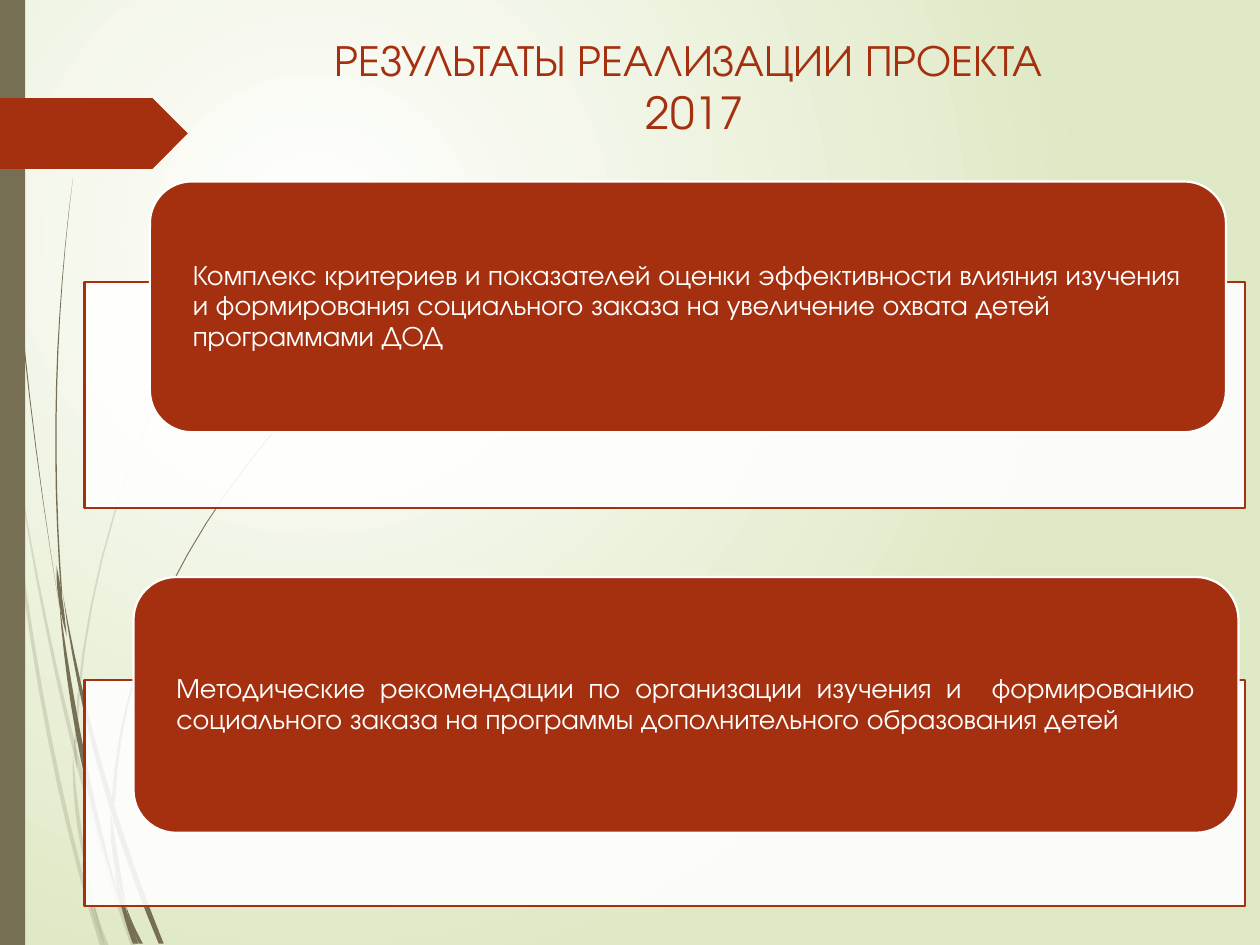
from dataclasses import dataclass

from lxml import etree
from pptx import Presentation
from pptx.dml.color import RGBColor
from pptx.enum import shapes, text
from pptx.oxml import ns
from pptx.util import Inches, Pt


@dataclass(frozen=True)
class Theme:
    accent: RGBColor = RGBColor(0xA5, 0x30, 0x10)
    stem: RGBColor = RGBColor(0x76, 0x6F, 0x54)
    white: RGBColor = RGBColor(0xFF, 0xFF, 0xFF)
    meadow: RGBColor = RGBColor(0xDF, 0xE8, 0xC4)
    font: str = "TeX Gyre Adventor"
    title_size: float = 25.2
    body_size: float = 16
    border: float = 1.25


@dataclass(frozen=True)
class Blade:
    """A curved blade of grass, in inches: three points on it and its width at each."""
    tip: tuple
    middle: tuple
    root: tuple
    widths: tuple


THEME = Theme()
BLADE_STEPS = 12
UNITS_PER_INCH = 1000

PALE_TUFT = {
    "outer leaf": Blade((0, 2.9), (0.32, 5.46), (0.81, 7.51), (0.01, 0.03, 0.03)),
    "inner leaf": Blade((0.1, 3.45), (0.52, 5.65), (1.06, 7.51), (0, 0.03, 0.04)),
    "shoot": Blade((2.17, 1.53), (1.03, 3.71), (0.6, 5.9), (0, 0.01, 0.02)),
    "shoot joint": Blade((0.59, 5.86), (0.6, 5.98), (0.61, 6.1), (0, 0.02, 0)),
    "shoot base": Blade((0.58, 5.99), (0.62, 6.5), (0.73, 7.11), (0, 0.03, 0)),
    "long root": Blade((0.65, 6.83), (0.72, 7.13), (0.83, 7.51), (0, 0.03, 0.01)),
    "short root": Blade((0.73, 7.11), (0.78, 7.31), (0.85, 7.51), (0, 0.02, 0.03)),
}
DARK_TUFT = {
    "outer leaf": Blade((0.03, 0), (0.15, 2.33), (0.47, 4.81), (0.01, 0.01, 0)),
    "outer leaf base": Blade((0.47, 4.77), (0.66, 6.02), (0.97, 7.22), (0, 0.04, 0)),
    "outer leaf root": Blade((0.97, 7.22), (1.02, 7.36), (1.07, 7.49), (0, 0.02, 0.03)),
    "inner leaf": Blade((0.5, 4.72), (0.8, 6.1), (1.28, 7.49), (0, 0.04, 0.04)),
    "upright leaf": Blade((0.58, 1.41), (0.45, 3.06), (0.49, 4.72), (0, 0.01, 0.01)),
    "upright joint": Blade((0.45, 4.49), (0.48, 4.75), (0.53, 5.05), (0, 0.03, 0)),
    "shoot": Blade((2.16, 3.44), (1.25, 4.88), (0.9, 6.36), (0.01, 0.01, 0.03)),
    "shoot joint": Blade((0.88, 6.31), (0.9, 6.44), (0.91, 6.56), (0, 0.02, 0)),
    "shoot base": Blade((0.88, 6.45), (0.92, 6.82), (1, 7.19), (0, 0.04, 0)),
    "long root": Blade((0.91, 6.91), (0.98, 7.2), (1.09, 7.49), (0, 0.03, 0.02)),
    "short root": Blade((1, 7.19), (1.05, 7.34), (1.12, 7.49), (0, 0.02, 0.03)),
}

TITLE = "РЕЗУЛЬТАТЫ РЕАЛИЗАЦИИ ПРОЕКТА \v2017"
# card box, alignment, wording
RESULTS = [
    ((1.19, 1.44, 8.54, 1.99), text.PP_ALIGN.LEFT,
     "Комплекс критериев и показателей оценки эффективности влияния изучения и "
     "формирования социального заказа на увеличение охвата детей программами ДОД"),
    ((1.06, 4.58, 8.77, 2.03), text.PP_ALIGN.JUSTIFY,
     "Методические рекомендации по организации изучения и  формированию "
     "социального заказа на программы дополнительного образования детей"),
]
FRAME_LEFT, FRAME_TOP, FRAME_WIDTH, FRAME_HEIGHT = 0.67, 2.24, 9.21, 1.79
FRAME_PITCH = 3.16
CARD_PADDING = 0.1


def apply(target, values):
    for name, value in values.items():
        setattr(target, name, value)


def paint(shape, fill, border=None, opacity=100):
    shape.shadow.inherit = False
    shape.fill.solid()
    shape.fill.fore_color.rgb = fill
    if opacity < 100:
        color = shape.element.spPr.find(ns.qn("a:solidFill"))[0]
        etree.SubElement(color, ns.qn("a:alpha")).set("val", str(opacity * 1000))
    if border is None:
        shape.line.fill.background()
    else:
        shape.line.color.rgb = border
        shape.line.width = Pt(THEME.border)


def through(start, middle, end, t):
    """Value at t of the parabola that meets start, middle, end at t = 0, 0.5, 1."""
    return (start * (1 - t) * (1 - 2 * t) + middle * 4 * t * (1 - t)
            + end * t * (2 * t - 1))


def blade_outline(blade):
    """Go down the left edge of the blade and back up its right edge."""
    left, right = [], []
    for step in range(BLADE_STEPS + 1):
        t = step / BLADE_STEPS
        x, y = (through(*axis, t) for axis in zip(blade.tip, blade.middle, blade.root))
        half = through(*blade.widths, t) / 2
        left.append((x - half, y))
        right.append((x + half, y))
    return [(x * UNITS_PER_INCH, y * UNITS_PER_INCH) for x, y in left + right[::-1]]


def add_blade(slide, blade, opacity):
    first, *others = blade_outline(blade)
    builder = slide.shapes.build_freeform(*first, scale=Inches(1) / UNITS_PER_INCH)
    builder.add_line_segments(others, close=True)
    paint(builder.convert_to_shape(), THEME.stem, opacity=opacity)


def add_block(slide, kind, box, fill, border=None, opacity=100):
    shape = slide.shapes.add_shape(kind, *map(Inches, box))
    paint(shape, fill, border, opacity)


def write(frame, wording, size, color, frame_format, paragraph_format):
    apply(frame, frame_format)
    frame.text = wording
    paragraph = frame.paragraphs[0]
    apply(paragraph, paragraph_format)
    for run in paragraph.runs:
        apply(run.font, {"name": THEME.font, "size": Pt(size)})
        run.font.color.rgb = color


def set_background(slide):
    """Radial gradient from white to meadow green."""
    fill = slide.background.fill
    fill.gradient()
    for stop, color, position in zip(fill.gradient_stops, (THEME.white, THEME.meadow), (0, 1)):
        stop.color.rgb = color
        stop.position = position
    gradient = slide.element.xpath("./p:cSld/p:bg//a:gradFill")[0]
    gradient.remove(gradient.find(ns.qn("a:lin")))
    radial = etree.SubElement(gradient, ns.qn("a:path"))
    radial.set("path", "circle")
    center = etree.SubElement(radial, ns.qn("a:fillToRect"))
    for side, percent in zip("ltrb", (50, 50, 100, 100)):
        center.set(side, str(percent * 1000))


def add_decoration(slide):
    for tuft, opacity in ((PALE_TUFT, 20), (DARK_TUFT, 100)):
        for blade in tuft.values():
            add_blade(slide, blade, opacity)
    add_block(slide, shapes.MSO_SHAPE.RECTANGLE, (0, 0, 0.2, 7.5), THEME.stem)
    add_block(slide, shapes.MSO_SHAPE.PENTAGON, (0, 0.78, 1.49, 0.56), THEME.accent)


def add_title(slide):
    title = slide.shapes.title
    slide.shapes.element.append(title.element)  # in front of the decoration
    apply(title, {"left": Inches(1.46), "top": Inches(0.21),
                  "width": Inches(8.11), "height": Inches(0.94)})
    write(title.text_frame, TITLE, THEME.title_size, THEME.accent,
          {"vertical_anchor": text.MSO_ANCHOR.MIDDLE, "auto_size": text.MSO_AUTO_SIZE.NONE},
          {"alignment": text.PP_ALIGN.CENTER})


def add_result(slide, row, card_box, alignment, wording):
    """A white frame, the card that overlaps it and the wording inside the card."""
    frame_box = (FRAME_LEFT, FRAME_TOP + row * FRAME_PITCH, FRAME_WIDTH, FRAME_HEIGHT)
    add_block(slide, shapes.MSO_SHAPE.RECTANGLE, frame_box, THEME.white, THEME.accent, opacity=90)
    add_block(slide, shapes.MSO_SHAPE.ROUNDED_RECTANGLE, card_box, THEME.accent, THEME.white)
    left, top, width, height = card_box
    label = slide.shapes.add_textbox(
        Inches(left + CARD_PADDING), Inches(top + CARD_PADDING),
        Inches(width - 2 * CARD_PADDING), Inches(height - 2 * CARD_PADDING))
    write(label.text_frame, wording, THEME.body_size, THEME.white,
          {"word_wrap": True, "vertical_anchor": text.MSO_ANCHOR.MIDDLE,
           "margin_left": Inches(0.24), "margin_right": Inches(0.24),
           "margin_top": 0, "margin_bottom": 0},
          {"alignment": alignment, "line_spacing": 0.9})


def main():
    deck = Presentation()
    apply(deck, {"slide_width": Inches(10), "slide_height": Inches(7.5)})
    slide = deck.slides.add_slide(deck.slide_layouts[5])
    set_background(slide)
    add_decoration(slide)
    add_title(slide)
    for row, result in enumerate(RESULTS):
        add_result(slide, row, *result)
    deck.save("out.pptx")


if __name__ == "__main__":
    main()
